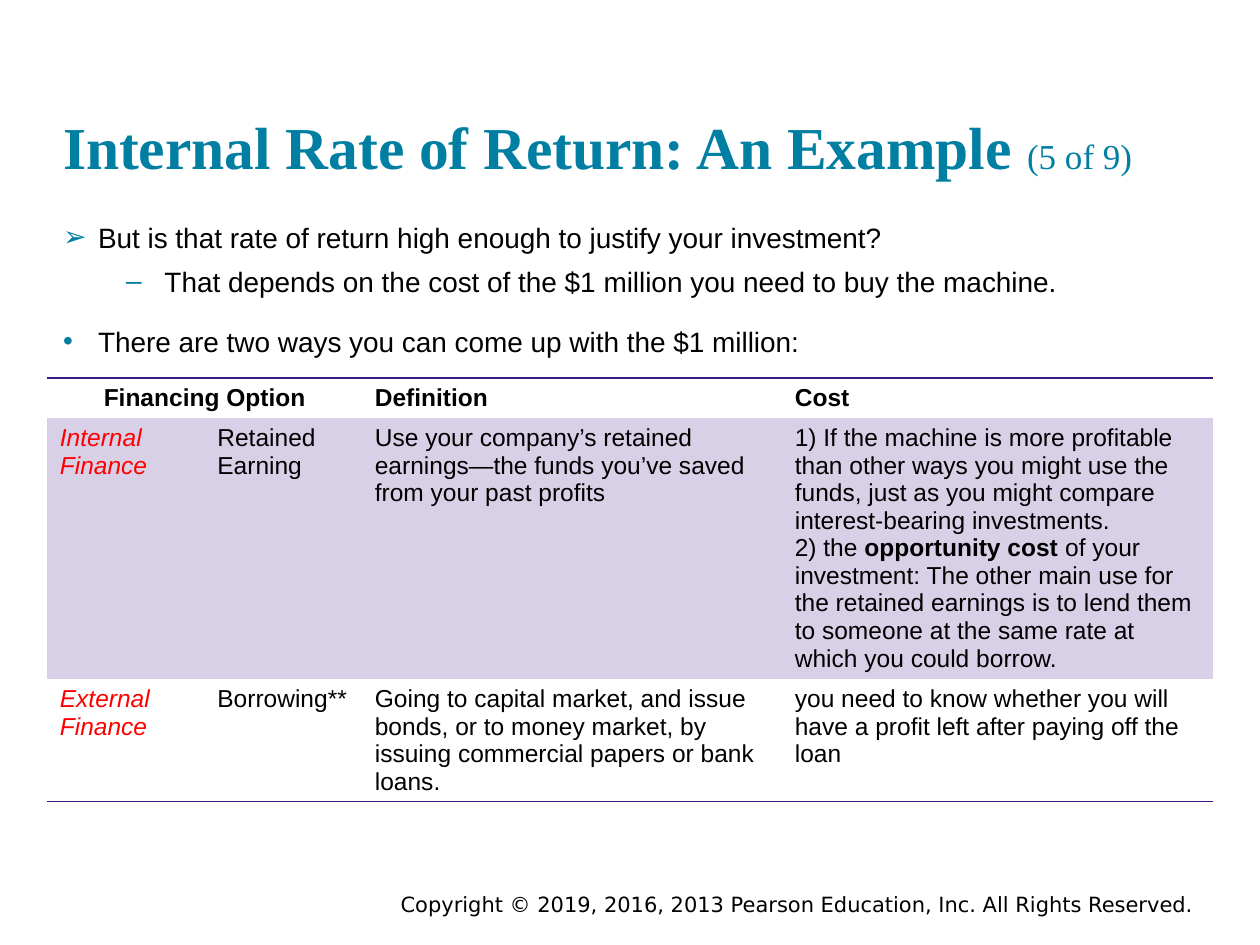
"""Build the slide on judging an internal rate of return by its financing cost."""

from dataclasses import dataclass
from typing import Optional

from lxml.etree import SubElement
from pptx import Presentation
from pptx.dml.color import RGBColor
from pptx.enum.text import MSO_ANCHOR, MSO_AUTO_SIZE, PP_ALIGN
from pptx.oxml.ns import qn
from pptx.util import Pt

COLOURS = {
    "teal": "007FA3",
    "black": "000000",
    "red": "FF0000",
    "purple": "3C1581",
    "lilac": "D8D0E6",
}


@dataclass
class Span:
    text: str
    size: float = 14
    colour: str = "black"
    bold: bool = False
    italic: bool = False
    font: str = "Arial"


@dataclass
class Bullet:
    text: str
    symbol: str
    level: int = 0
    left: float = 20
    hanging: float = 20
    before: float = 15


@dataclass
class Row:
    height: float
    cells: list[list[list[Span]]]
    fill: Optional[str] = None
    top_line: bool = False
    bottom_line: bool = False


def plain(text: str, **style) -> list[list[Span]]:
    """Return cell content holding one paragraph with one span."""
    return [[Span(text, **style)]]


BULLETS = [
    Bullet("But is that rate of return high enough to justify your investment?", "➢", before=0),
    Bullet("That depends on the cost of the $1 million you need to buy the machine.", "–", 1, 58, 22, 6),
    Bullet("There are two ways you can come up with the $1 million:", "•"),
]
COLUMN_WIDTHS = [90, 90, 240, 246]
ROWS = [
    Row(
        23,
        [plain("Financing Option", bold=True), [], plain("Definition", bold=True), plain("Cost", bold=True)],
        top_line=True,
        bottom_line=True,
    ),
    Row(
        149,
        [
            plain("Internal Finance", colour="red", italic=True),
            plain("Retained Earning"),
            plain("Use your company’s retained earnings—the funds you’ve saved from your past profits"),
            [
                [Span("1) If the machine is more profitable than other ways you might use the funds, "
                      "just as you might compare interest-bearing investments.")],
                [
                    Span("2) the "),
                    Span("opportunity cost ", bold=True),
                    Span("of your investment: The other main use for the retained earnings is to lend "
                         "them to someone at the same rate at which you could borrow."),
                ],
            ],
        ],
        fill="lilac",
    ),
    Row(
        70,
        [
            plain("External Finance", colour="red", italic=True),
            plain("Borrowing**"),
            plain("Going to capital market, and issue bonds, or to money market, by issuing "
                  "commercial papers or bank loans."),
            plain("you need to know whether you will have a profit left after paying off the loan"),
        ],
        bottom_line=True,
    ),
]


def write_spans(paragraph, spans: list[Span]) -> None:
    """Add formatted runs to a paragraph."""
    for span in spans:
        run = paragraph.add_run()
        run.text = span.text
        font = run.font
        font.name, font.size = span.font, Pt(span.size)
        font.bold, font.italic = span.bold, span.italic
        font.color.rgb = RGBColor.from_string(COLOURS[span.colour])


def place(box, left: float, top: float, width: float, height: float, anchor: MSO_ANCHOR) -> None:
    """Position a placeholder and clear its insets."""
    box.left, box.top, box.width, box.height = Pt(left), Pt(top), Pt(width), Pt(height)
    frame = box.text_frame
    frame.margin_left = frame.margin_right = frame.margin_top = frame.margin_bottom = 0
    frame.word_wrap = True
    frame.auto_size = MSO_AUTO_SIZE.NONE
    frame.vertical_anchor = anchor


def write_bullet(paragraph, bullet: Bullet) -> None:
    """Fill a paragraph as a bulleted item with a hanging indent."""
    paragraph.level = bullet.level
    paragraph.space_before = Pt(bullet.before)
    properties = paragraph._p.get_or_add_pPr()
    properties.set("marL", str(Pt(bullet.left)))
    properties.set("indent", str(-Pt(bullet.hanging)))
    colour = SubElement(properties, qn("a:buClr"))
    SubElement(colour, qn("a:srgbClr"), val=COLOURS["teal"])
    SubElement(properties, qn("a:buFont"), typeface="Arial")
    SubElement(properties, qn("a:buChar"), char=bullet.symbol)
    write_spans(paragraph, [Span(bullet.text, size=16)])


def draw_borders(cell, row: Row) -> None:
    """Draw the ruled edges of a cell and hide the others."""
    ruled = {"lnL": False, "lnR": False, "lnT": row.top_line, "lnB": row.bottom_line}
    properties = cell._tc.get_or_add_tcPr()
    for edge, visible in ruled.items():
        line = SubElement(properties, qn(f"a:{edge}"), w=str(Pt(1)))
        if visible:
            fill = SubElement(line, qn("a:solidFill"))
            SubElement(fill, qn("a:srgbClr"), val=COLOURS["purple"])
        else:
            SubElement(line, qn("a:noFill"))


def draw_table(page) -> None:
    """Draw the table of financing options."""
    height = sum(row.height for row in ROWS)
    shape = page.shapes.add_table(
        len(ROWS), len(COLUMN_WIDTHS), Pt(27), Pt(216), Pt(sum(COLUMN_WIDTHS)), Pt(height)
    )
    table = shape.table
    table.first_row = table.horz_banding = False
    for column, width in zip(table.columns, COLUMN_WIDTHS):
        column.width = Pt(width)
    for index, row in enumerate(ROWS):
        table.rows[index].height = Pt(row.height)
        for cell, content in zip(table.rows[index].cells, row.cells):
            draw_borders(cell, row)
            if row.fill:
                cell.fill.solid()
                cell.fill.fore_color.rgb = RGBColor.from_string(COLOURS[row.fill])
            else:
                cell.fill.background()
            frame = cell.text_frame
            for number, spans in enumerate(content):
                write_spans(frame.add_paragraph() if number else frame.paragraphs[0], spans)
    option = table.cell(0, 0)
    option.merge(table.cell(0, 1))
    option.text_frame.paragraphs[0].alignment = PP_ALIGN.CENTER


def main() -> None:
    """Assemble and save the deck."""
    deck = Presentation()
    deck.slide_width, deck.slide_height = Pt(720), Pt(540)
    page = deck.slides.add_slide(deck.slide_layouts[1])
    title, body = page.placeholders[0], page.placeholders[1]

    place(title, 36, 17, 648, 86.5, MSO_ANCHOR.BOTTOM)
    heading = title.text_frame.paragraphs[0]
    heading.alignment = PP_ALIGN.LEFT
    serif = {"colour": "teal", "font": "Times New Roman"}
    write_spans(heading, [
        Span("Internal Rate of Return: An Example ", 34, bold=True, **serif),
        Span("(5 of 9)", 20, **serif),
    ])

    place(body, 36, 126, 648, 356, MSO_ANCHOR.TOP)
    frame = body.text_frame
    for number, bullet in enumerate(BULLETS):
        write_bullet(frame.add_paragraph() if number else frame.paragraphs[0], bullet)

    draw_table(page)

    footer = page.shapes.add_textbox(Pt(212.5), Pt(506), Pt(486), Pt(21.6))
    footer.text_frame.word_wrap = True
    notice = footer.text_frame.paragraphs[0]
    notice.alignment = PP_ALIGN.CENTER
    write_spans(notice, [Span("Copyright © 2019, 2016, 2013 Pearson Education, Inc. All Rights Reserved.",
                              12, font="DejaVu Sans")])
    deck.save("out.pptx")


if __name__ == "__main__":
    main()
